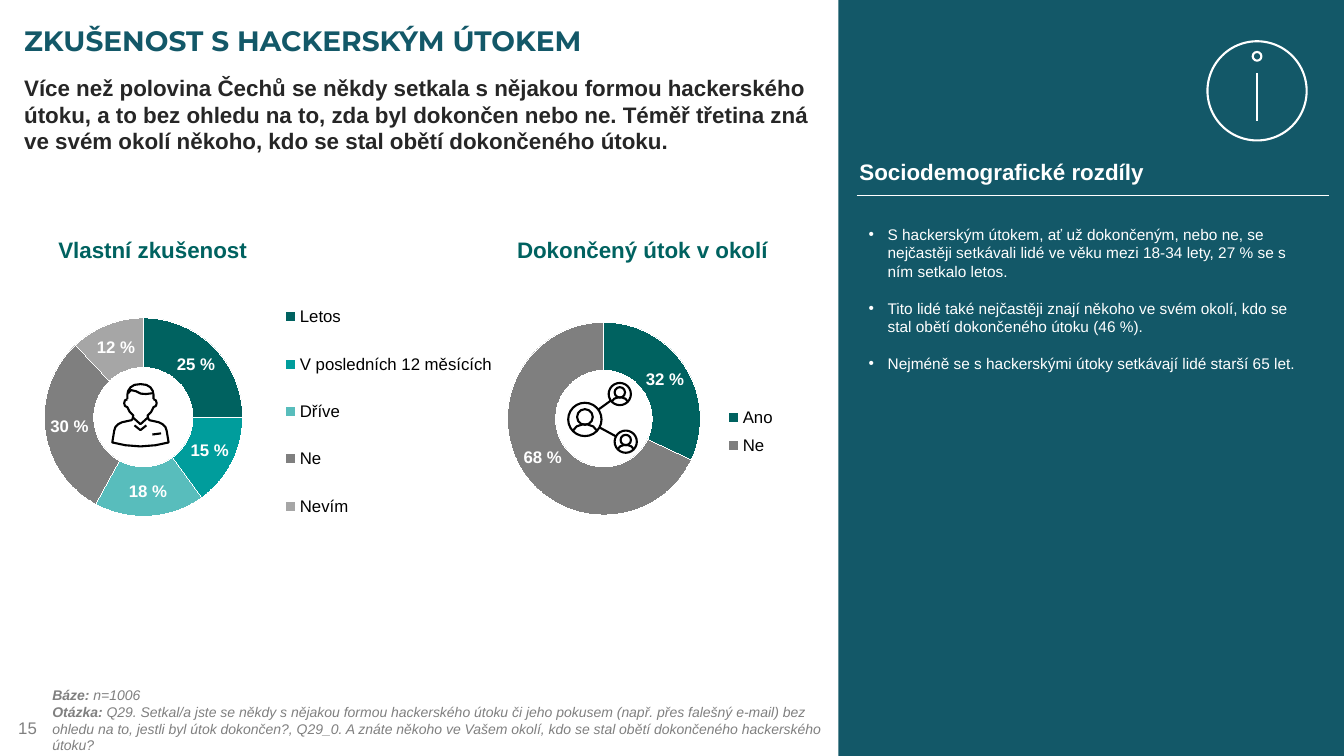
import math

import lxml.etree
import pptx
import pptx.chart.data
import pptx.dml.color
import pptx.enum.chart
import pptx.enum.shapes
import pptx.enum.text
import pptx.oxml
import pptx.oxml.ns
import pptx.util

Cm = pptx.util.Cm
Pt = pptx.util.Pt
RGB = pptx.dml.color.RGBColor.from_string
qn = pptx.oxml.ns.qn


class Theme:
    font, title_font = "Arial", "Montserrat"
    petrol, green, teal, aqua = "135868", "006260", "009D9C", "58BDBC"
    grey, silver, note = "7F7F7F", "A6A6A6", "808080"
    ink, black, white = "262626", "000000", "FFFFFF"
    title, heading, label, bullet, footer = 20, 16, 12, 11, 10
    hairline, stroke = 0.5, 1.5


presentation = pptx.Presentation()
presentation.slide_width, presentation.slide_height = Cm(33.87), Cm(19.05)
slide = presentation.slides.add_slide(presentation.slide_layouts[6])


def add_text(paragraphs, box, size, colour, bold=False, italic=False, font=Theme.font,
             middle=False, insets=(0.25, 0.13), bullet=False, gap=0, wrap=True):
    """Each paragraph is a string or a list of (text, bold) runs."""
    frame = slide.shapes.add_textbox(*(Cm(length) for length in box)).text_frame
    frame.word_wrap = wrap
    frame.margin_left = frame.margin_right = Cm(insets[0])
    frame.margin_top = frame.margin_bottom = Cm(insets[1])
    if middle:
        frame.vertical_anchor = pptx.enum.text.MSO_ANCHOR.MIDDLE
    for index, runs in enumerate(paragraphs):
        paragraph = frame.paragraphs[0] if index == 0 else frame.add_paragraph()
        if index and gap:
            paragraph.space_before = Pt(gap)
        if bullet:
            properties = paragraph._p.get_or_add_pPr()
            properties.set("marL", str(Cm(0.48)))
            properties.set("indent", str(-Cm(0.48)))
            lxml.etree.SubElement(properties, qn("a:buFont")).set("typeface", font)
            lxml.etree.SubElement(properties, qn("a:buChar")).set("char", "•")
        for text, run_bold in ([(runs, bold)] if isinstance(runs, str) else runs):
            run = paragraph.add_run()
            run.text = text
            run.font.name, run.font.size = font, Pt(size)
            run.font.bold, run.font.italic = run_bold, italic
            run.font.color.rgb = RGB(colour)


def add_outline(group, points, closed=False):
    start, *others = [(Cm(x), Cm(y)) for x, y in points]
    builder = group.shapes.build_freeform(*start, scale=1.0)
    builder.add_line_segments(others, close=closed)
    shape = builder.convert_to_shape()
    shape.shadow.inherit = False
    shape.fill.background()
    shape.line.color.rgb = RGB(Theme.black)
    shape.line.width = Pt(Theme.stroke)


# Side panel
panel = slide.shapes.add_shape(pptx.enum.shapes.MSO_SHAPE.RECTANGLE,
                               Cm(21.13), 0, Cm(12.74), Cm(19.05))
panel.shadow.inherit = False
panel.fill.solid()
panel.fill.fore_color.rgb = RGB(Theme.petrol)
panel.line.fill.background()

# Texts
add_text(["ZKUŠENOST S HACKERSKÝM ÚTOKEM"], (0.36, 0.34, 33.15, 1.35), Theme.title,
         Theme.petrol, bold=True, font=Theme.title_font, middle=True)
add_text(["Více než polovina Čechů se někdy setkala s nějakou formou hackerského útoku, "
          "a to bez ohledu na to, zda byl dokončen nebo ne. Téměř třetina zná ve svém "
          "okolí někoho, kdo se stal obětí dokončeného útoku."],
         (0.36, 1.73, 20.78, 1.78), Theme.heading, Theme.ink, bold=True)
add_text(["15"], (0.13, 17.83, 7.9, 1.02), Theme.label, Theme.note,
         middle=True, insets=(0.33, 0.18))
add_text([[("Báze: ", True), ("n=1006", False)],
          [("Otázka:", True),
           (" Q29. Setkal/a jste se někdy s nějakou formou hackerského útoku či jeho pokusem "
            "(např. přes falešný e-mail) bez ohledu na to, jestli byl útok dokončen?, Q29_0. "
            "A znáte někoho ve Vašem okolí, kdo se stal obětí dokončeného hackerského útoku?",
            False)]],
         (1.32, 17.3, 19.81, 1.7), Theme.footer, Theme.note, italic=True, insets=(0, 0))
add_text(["Sociodemografické rozdíly"], (21.41, 3.86, 7.77, 0.94), Theme.heading,
         Theme.white, bold=True, wrap=False)
add_text(["S hackerským útokem, ať už dokončeným, nebo ne, se nejčastěji setkávali lidé ve "
          "věku mezi 18-34 lety, 27 % se s ním setkalo letos.",
          "Tito lidé také nejčastěji znají někoho ve svém okolí, kdo se stal obětí "
          "dokončeného útoku (46 %).",
          "Nejméně se s hackerskými útoky setkávají lidé starší 65 let."],
         (21.64, 5.54, 11.56, 4.5), Theme.bullet, Theme.white, bullet=True, gap=13)

# Doughnut charts: heading, heading left and width, frame, plot area, legend, slices
charts = [
    ("Vlastní zkušenost", 1.22, 6.05, (0.97, 5.79, 11.94, 11.18),
     (0.012, 0.198, 0.419, 0.449), (0.51, 0.11, 0.46, 0.6),
     [("Letos", 25, Theme.green), ("V posledních 12 měsících", 15, Theme.teal),
      ("Dříve", 18, Theme.aqua), ("Ne", 30, Theme.grey), ("Nevím", 12, Theme.silver)]),
    ("Dokončený útok v okolí", 12.78, 7.16, (12.19, 6.3, 12.7, 10.64),
     (0.047, 0.171, 0.383, 0.457), (0.47, 0.35, 0.12, 0.16),
     [("Ano", 32, Theme.green), ("Ne", 68, Theme.grey)]),
]
for heading, left, width, frame, plot_area, legend_area, slices in charts:
    data = pptx.chart.data.CategoryChartData()
    data.categories = [name for name, value, colour in slices]
    data.add_series("Series 1", [value for name, value, colour in slices])
    chart = slide.shapes.add_chart(pptx.enum.chart.XL_CHART_TYPE.DOUGHNUT,
                                   *(Cm(length) for length in frame), data).chart
    chart.has_title = False
    chart.font.name, chart.font.size = Theme.font, Pt(Theme.footer)
    chart.font.color.rgb = RGB(Theme.black)
    chart.has_legend = True
    chart.legend.position = pptx.enum.chart.XL_LEGEND_POSITION.RIGHT
    chart.legend.include_in_layout = False
    chart.legend.font.name, chart.legend.font.size = Theme.font, Pt(Theme.label)
    chart.legend.font.color.rgb = RGB(Theme.black)

    plot = chart.plots[0]
    plot.vary_by_categories = True
    plot.has_data_labels = True
    labels = plot.data_labels
    labels.show_value, labels.show_percentage = True, False
    labels.number_format, labels.number_format_is_linked = '#,##0" %"', False
    labels.font.name, labels.font.size = Theme.font, Pt(Theme.label)
    labels.font.bold = True
    labels.font.color.rgb = RGB(Theme.white)
    for index, (name, value, colour) in enumerate(slices):
        point = plot.series[0].points[index].format
        point.fill.solid()
        point.fill.fore_color.rgb = RGB(colour)
        point.line.color.rgb = RGB(Theme.white)

    # Fixed places of plot and legend, as fractions of the frame
    for tag, position, area in (("plotArea", 0, plot_area), ("legend", 1, legend_area)):
        parent = chart.element.xpath(f"c:chart/c:{tag}")[0]
        for existing in parent.findall(qn("c:layout")):
            parent.remove(existing)
        layout = lxml.etree.Element(qn("c:layout"))
        manual = lxml.etree.SubElement(layout, qn("c:manualLayout"))
        entries = [("xMode", "edge"), ("yMode", "edge"), *zip("xywh", area)]
        if tag == "plotArea":
            entries.insert(0, ("layoutTarget", "inner"))
        for entry, value in entries:
            lxml.etree.SubElement(manual, qn(f"c:{entry}")).set("val", str(value))
        parent.insert(position, layout)

    add_text([heading], (left, 5.82, width, 0.94), Theme.heading, Theme.green, bold=True)

# Person icon: right halves as (offset from the axis, y), mirrored to the left
person = slide.shapes.add_group_shape()
axis = 3.54
body = [(0.33, 10.06), (0.39, 10.09), (0.41, 10.16), (0.39, 10.23), (0.33, 10.26),
        (0.27, 10.38), (0.18, 10.47), (0.2, 10.56), (0.23, 10.59), (0.46, 10.64),
        (0.56, 10.69), (0.63, 10.76), (0.66, 10.85), (0.71, 11.15), (0.38, 11.22), (0, 11.25)]
hair = [(0, 9.68), (0.15, 9.7), (0.25, 9.76), (0.31, 9.85), (0.33, 9.95), (0.33, 10.06)]
chin = [(0, 10.84), (0.15, 10.72)]
collar = [(0, 10.69), (0.19, 10.52)]
for half in (body, hair[::-1], chin[::-1], collar[::-1]):
    add_outline(person, [(axis + x, y) for x, y in half]
                + [(axis - x, y) for x, y in half[-2::-1]])
add_outline(person, [(3.23, 9.91), (3.3, 9.83), (3.43, 9.86), (3.55, 9.92),
                     (3.68, 9.93), (3.84, 9.91)])

# Circles and lines of the network and info icons
network = slide.shapes.add_group_shape()
info = slide.shapes.add_group_shape()
members = [(14.74, 10.57, 0.42), (15.62, 9.93, 0.28), (15.77, 11.13, 0.28)]
circles = [(info, 31.68, 2.29, 1.25, Theme.white), (info, 31.68, 1.42, 0.11, Theme.white)]
lines = [(slide, 21.59, 4.93, 33.5, 4.93, Theme.white, Theme.hairline),
         (info, 31.68, 1.85, 31.68, 3.05, Theme.white, Theme.stroke),
         (person, 3.84, 10.95, 4.06, 10.92, Theme.black, Theme.stroke)]
shoulders = [(-0.72, 0.68), (-0.5, 0.42), (-0.15, 0.3), (0.15, 0.3), (0.5, 0.42), (0.72, 0.68)]
hub_x, hub_y, hub_radius = members[0]
for x, y, radius in members:
    circles += [(network, x, y, radius, Theme.black),
                (network, x, y - 0.15 * radius, 0.47 * radius, Theme.black)]
    add_outline(network, [(x + radius * dx, y + radius * dy) for dx, dy in shoulders])
    distance = math.hypot(x - hub_x, y - hub_y)
    if distance:
        dx, dy = (x - hub_x) / distance, (y - hub_y) / distance
        lines.append((network, hub_x + hub_radius * dx, hub_y + hub_radius * dy,
                      x - radius * dx, y - radius * dy, Theme.black, Theme.stroke))

for parent, x, y, radius, colour in circles:
    circle = parent.shapes.add_shape(pptx.enum.shapes.MSO_SHAPE.OVAL, Cm(x - radius),
                                     Cm(y - radius), Cm(2 * radius), Cm(2 * radius))
    circle.shadow.inherit = False
    circle.fill.background()
    circle.line.color.rgb = RGB(colour)
    circle.line.width = Pt(Theme.stroke)
for parent, x1, y1, x2, y2, colour, weight in lines:
    line = parent.shapes.add_connector(pptx.enum.shapes.MSO_CONNECTOR.STRAIGHT,
                                       Cm(x1), Cm(y1), Cm(x2), Cm(y2))
    line.line.color.rgb = RGB(colour)
    line.line.width = Pt(weight)
    lxml.etree.SubElement(line.element.spPr, qn("a:effectLst"))

presentation.save("out.pptx")
